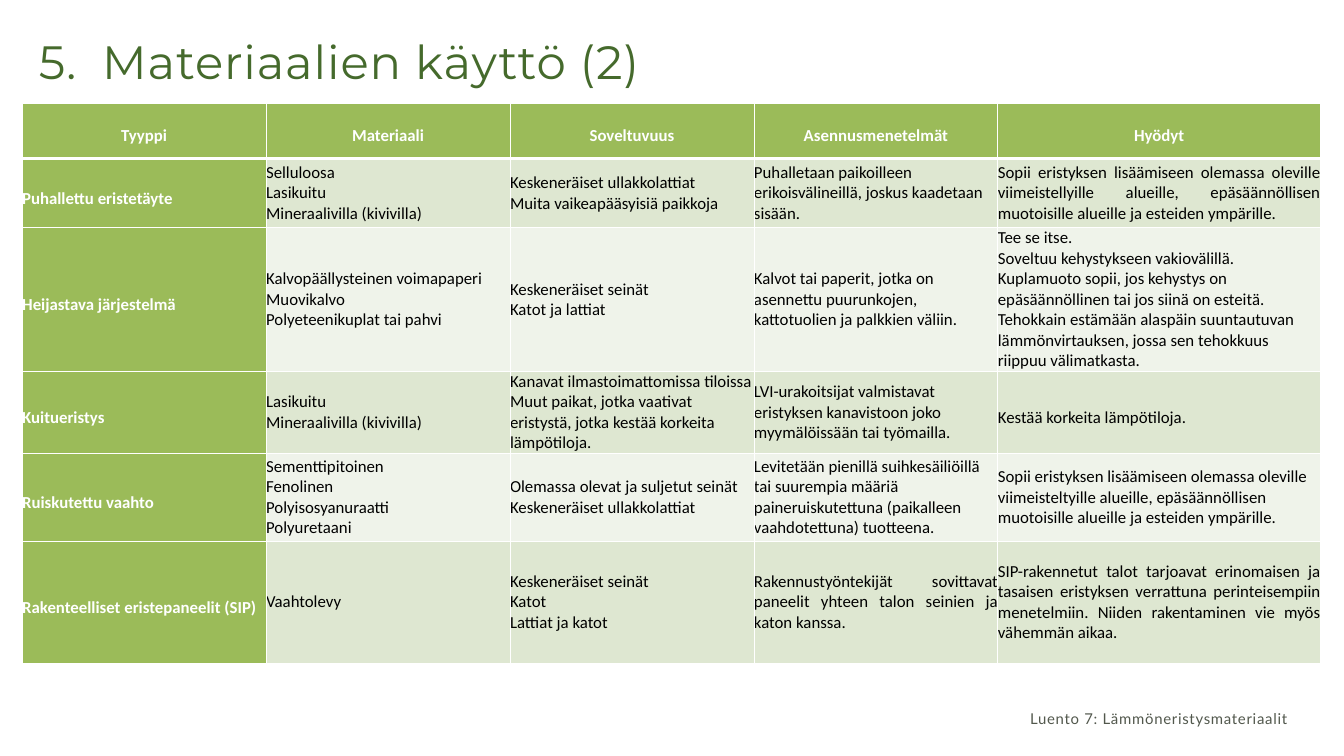
"""Build the slide on the use of insulation materials."""
from dataclasses import dataclass

from lxml import etree
from pptx import Presentation
from pptx.dml.color import RGBColor
from pptx.enum.text import MSO_ANCHOR, MSO_AUTO_SIZE, PP_ALIGN
from pptx.oxml.ns import qn
from pptx.util import Inches, Pt

LEFT, CENTER = PP_ALIGN.LEFT, PP_ALIGN.CENTER
RIGHT, JUSTIFY = PP_ALIGN.RIGHT, PP_ALIGN.JUSTIFY
MIDDLE = MSO_ANCHOR.MIDDLE
GROW = MSO_AUTO_SIZE.SHAPE_TO_FIT_TEXT


@dataclass(frozen=True)
class Theme:
    """Colours, fonts and sizes of the slide."""
    title: str = "456A2C"
    footer: str = "52584D"
    accent: str = "9BBB59"
    bands: tuple[str, str] = ("DEE7D1", "EFF3EA")
    white: str = "FFFFFF"
    black: str = "000000"
    title_font: str = "Montserrat"
    footer_font: str = "Lato"
    table_font: str = "Calibri"
    title_size: int = 50
    footer_size: int = 16
    table_size: int = 18
    rule: int = 1
    header_rule: int = 3


@dataclass(frozen=True)
class Style:
    """Character formatting of a run."""
    font: str
    size: int
    color: str
    bold: bool = False
    tracking: float = 0


@dataclass(frozen=True)
class Cell:
    """Paragraphs of a table cell and their layout."""
    lines: tuple[str, ...]
    align: PP_ALIGN = LEFT
    after: int = 0
    spacing: float = 1.0


@dataclass(frozen=True)
class Caption:
    """Single-line text box."""
    text: str
    box: tuple[float, float, float, float]
    style: Style
    leading: float
    align: PP_ALIGN = LEFT
    inset: bool = True
    tab: float = 0


T = Theme()
LABEL = Style(T.table_font, T.table_size, T.white, True)
BODY = Style(T.table_font, T.table_size, T.black)


def items(*lines: str, align: PP_ALIGN = LEFT) -> Cell:
    """Return a cell with one tight paragraph per line."""
    return Cell(lines, align)


def prose(text: str, align: PP_ALIGN = LEFT) -> Cell:
    """Return a cell with one wrapped paragraph."""
    return Cell((text,), align, 6)


def label(text: str, align: PP_ALIGN = JUSTIFY) -> Cell:
    """Return a cell with one widely spaced paragraph."""
    return Cell((text,), align, 6, 1.5)


COLUMNS = (3.63, 3.63, 3.63, 3.63, 4.8)
HEIGHTS = (0.82, 1.03, 2.12, 1.2, 1.31, 1.81)
HEADINGS = ("Tyyppi", "Materiaali", "Soveltuvuus", "Asennusmenetelmät", "Hyödyt")
ROWS = (
    tuple(label(h, CENTER) for h in HEADINGS),
    (label("Puhallettu eristetäyte"),
     items("Selluloosa", "Lasikuitu", "Mineraalivilla (kivivilla)"),
     items("Keskeneräiset ullakkolattiat", "Muita vaikeapääsyisiä paikkoja"),
     prose("Puhalletaan paikoilleen erikoisvälineillä, joskus kaadetaan sisään."),
     prose("Sopii eristyksen lisäämiseen olemassa oleville viimeistellyille alueille, "
           "epäsäännöllisen muotoisille alueille ja esteiden ympärille.", JUSTIFY)),
    (label("Heijastava järjestelmä"),
     items("Kalvopäällysteinen voimapaperi", "Muovikalvo",
           "Polyeteenikuplat tai pahvi", align=JUSTIFY),
     items("Keskeneräiset seinät", "Katot ja lattiat", align=JUSTIFY),
     prose("Kalvot tai paperit, jotka on asennettu puurunkojen, kattotuolien ja "
           "palkkien väliin."),
     items("Tee se itse.", "Soveltuu kehystykseen vakiovälillä.",
           "Kuplamuoto sopii, jos kehystys on epäsäännöllinen tai jos siinä on esteitä. "
           "Tehokkain estämään alaspäin suuntautuvan lämmönvirtauksen, jossa sen "
           "tehokkuus riippuu välimatkasta.")),
    (label("Kuitueristys"),
     items("Lasikuitu", "Mineraalivilla (kivivilla)"),
     items("Kanavat ilmastoimattomissa tiloissa",
           "Muut paikat, jotka vaativat eristystä, jotka kestää korkeita lämpötiloja."),
     prose("LVI-urakoitsijat valmistavat eristyksen kanavistoon joko myymälöissään "
           "tai työmailla."),
     label("Kestää korkeita lämpötiloja.")),
    (label("Ruiskutettu vaahto"),
     items("Sementtipitoinen", "Fenolinen", "Polyisosyanuraatti", "Polyuretaani"),
     items("Olemassa olevat ja suljetut seinät", "Keskeneräiset ullakkolattiat"),
     prose("Levitetään pienillä suihkesäiliöillä tai suurempia määriä "
           "paineruiskutettuna (paikalleen vaahdotettuna) tuotteena."),
     prose("Sopii eristyksen lisäämiseen olemassa oleville viimeisteltyille alueille, "
           "epäsäännöllisen muotoisille alueille ja esteiden ympärille.")),
    (label("Rakenteelliset eristepaneelit (SIP)"),
     items("Vaahtolevy"),
     items("Keskeneräiset seinät", "Katot", "Lattiat ja katot", align=JUSTIFY),
     prose("Rakennustyöntekijät sovittavat paneelit yhteen talon seinien ja katon "
           "kanssa.", JUSTIFY),
     prose("SIP-rakennetut talot tarjoavat erinomaisen ja tasaisen eristyksen "
           "verrattuna perinteisempiin menetelmiin. Niiden rakentaminen vie myös "
           "vähemmän aikaa.", JUSTIFY)),
)
CAPTIONS = (
    Caption("5.\tMateriaalien käyttö (2)", (0.58, 0.4, 18.29, 0.89),
            Style(T.title_font, T.title_size, T.title, tracking=1), 66.8,
            inset=False, tab=0.94),
    Caption("Luento 7: Lämmöneristysmateriaalit ", (9.33, 10.47, 10, 0.4),
            Style(T.footer_font, T.footer_size, T.footer, tracking=0.8), 22.4, RIGHT),
)


def add_run(p, text: str, style: Style) -> None:
    """Append a formatted run to a paragraph."""
    r = p.add_run()
    r.text = text
    r.font.name, r.font.size, r.font.bold = style.font, Pt(style.size), style.bold
    r.font.color.rgb = RGBColor.from_string(style.color)
    if style.tracking:
        r.font._element.set("spc", str(round(style.tracking * 100)))


def add_border(cell, side: str, width: int) -> None:
    """Draw one white edge of a cell."""
    ln = etree.SubElement(cell._tc.get_or_add_tcPr(), qn(f"a:ln{side}"), w=str(Pt(width)))
    fill = etree.SubElement(ln, qn("a:solidFill"))
    etree.SubElement(fill, qn("a:srgbClr"), val=T.white)


def fill_cell(cell, content: Cell, row: int, col: int) -> None:
    """Write and format one table cell."""
    is_label = row == 0 or col == 0
    cell.margin_left = cell.margin_right = cell.margin_top = cell.margin_bottom = 0
    cell.vertical_anchor = MIDDLE
    for side in "LRTB":
        heavy = (row, side) in ((0, "B"), (1, "T"))
        add_border(cell, side, T.header_rule if heavy else T.rule)
    cell.fill.solid()
    color = T.accent if is_label else T.bands[(row - 1) % 2]
    cell.fill.fore_color.rgb = RGBColor.from_string(color)
    tf = cell.text_frame
    for i, line in enumerate(content.lines):
        p = tf.add_paragraph() if i else tf.paragraphs[0]
        p.alignment, p.line_spacing = content.align, content.spacing
        p.space_after = Pt(content.after)
        add_run(p, line, LABEL if is_label else BODY)


def add_materials_table(s) -> None:
    """Add the table of insulation types."""
    table = s.shapes.add_table(len(ROWS), len(COLUMNS), Inches(0.33), Inches(1.54),
                               Inches(sum(COLUMNS)), Inches(sum(HEIGHTS))).table
    for column, width in zip(table.columns, COLUMNS):
        column.width = Inches(width)
    for i, (height, row) in enumerate(zip(HEIGHTS, ROWS)):
        table.rows[i].height = Inches(height)
        for j, content in enumerate(row):
            fill_cell(table.cell(i, j), content, i, j)


def add_caption(s, caption: Caption) -> None:
    """Add a single-line text box."""
    tf = s.shapes.add_textbox(*map(Inches, caption.box)).text_frame
    tf.word_wrap, tf.auto_size = True, GROW
    if not caption.inset:
        tf.margin_left = tf.margin_right = tf.margin_top = tf.margin_bottom = 0
    p = tf.paragraphs[0]
    p.alignment, p.line_spacing = caption.align, Pt(caption.leading)
    if caption.tab:
        tabs = etree.SubElement(p._p.get_or_add_pPr(), qn("a:tabLst"))
        etree.SubElement(tabs, qn("a:tab"), pos=str(Inches(caption.tab)), algn="l")
    add_run(p, caption.text, caption.style)


def main() -> None:
    """Build and save the presentation."""
    prs = Presentation()
    prs.slide_width, prs.slide_height = Inches(20), Inches(11.25)
    s = prs.slides.add_slide(prs.slide_layouts[6])
    add_materials_table(s)
    for caption in CAPTIONS:
        add_caption(s, caption)
    prs.save("out.pptx")


if __name__ == "__main__":
    main()
